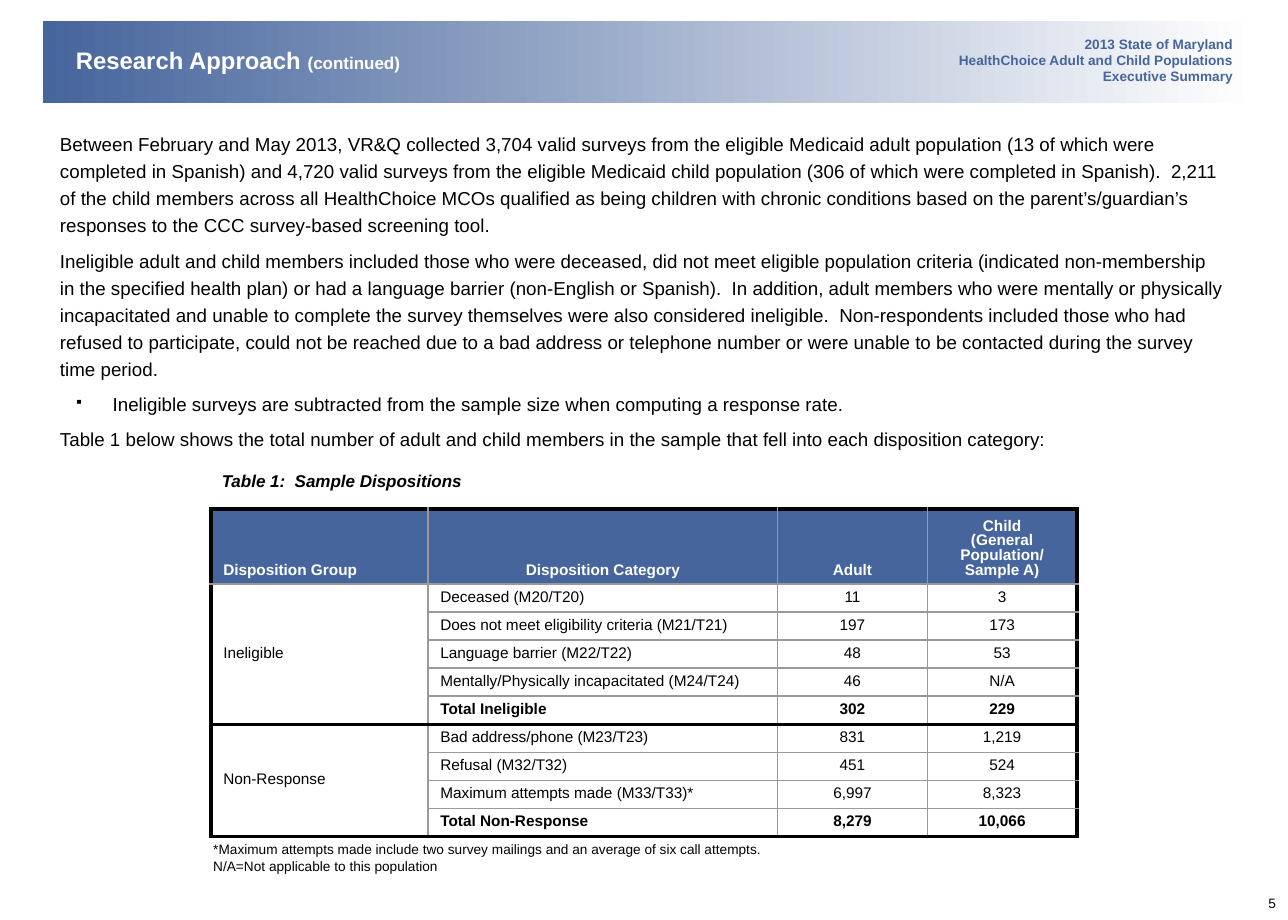
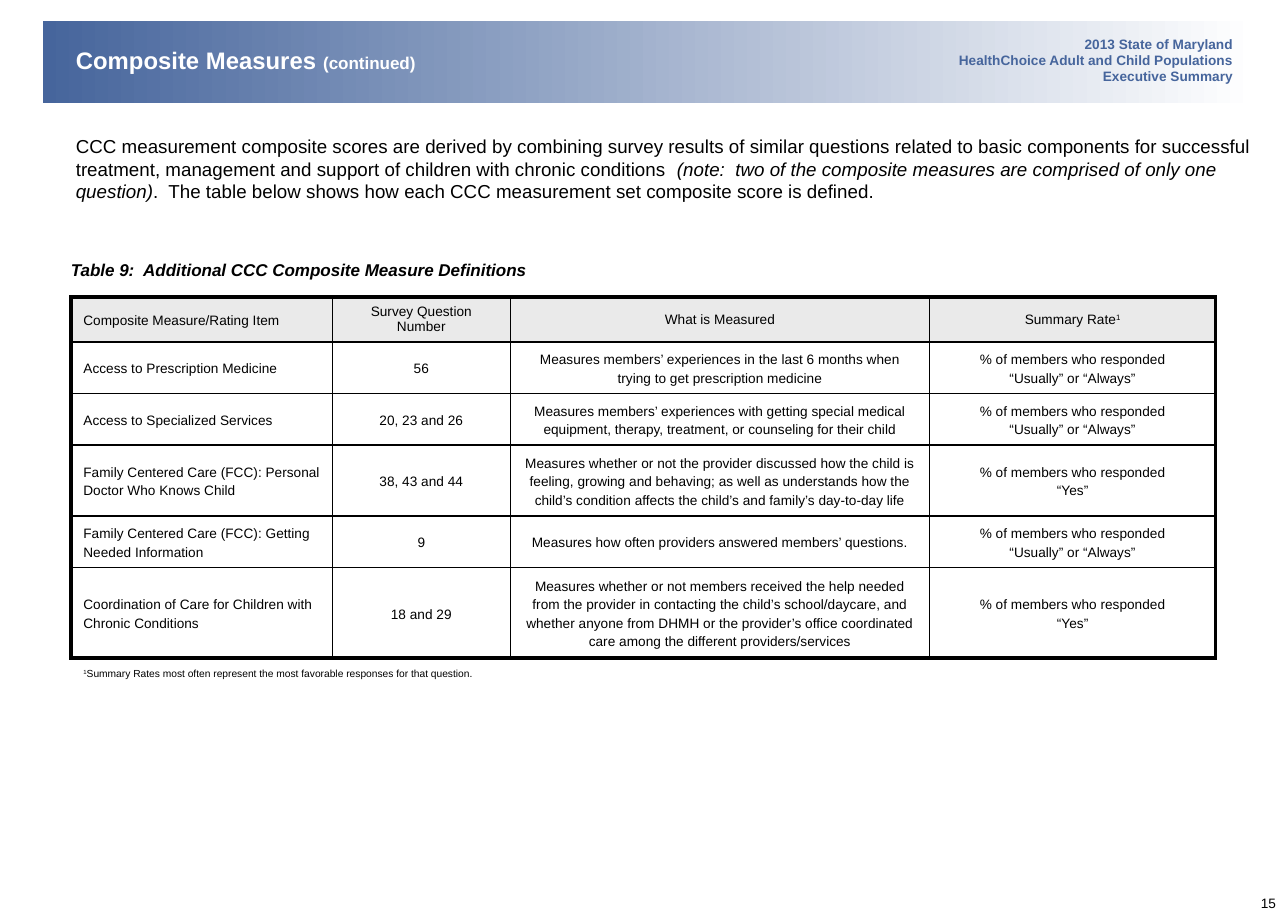
"""Build two survey report slides with a shared heading band and ruled tables."""
from dataclasses import dataclass

from lxml import etree
from pptx import Presentation, util as u
from pptx.dml.color import RGBColor
from pptx.enum import shapes, text
from pptx.oxml.ns import qn

LEFT, CENTER, RIGHT = text.PP_ALIGN.LEFT, text.PP_ALIGN.CENTER, text.PP_ALIGN.RIGHT
TOP, MIDDLE, BOTTOM = text.MSO_ANCHOR.TOP, text.MSO_ANCHOR.MIDDLE, text.MSO_ANCHOR.BOTTOM


@dataclass(frozen=True)
class Theme:
    """Colours, type sizes and line widths of the report."""
    font: str = "Arial"
    blue: str = "46659C"
    white: str = "FFFFFF"
    black: str = "000000"
    rule: str = "999999"
    shade: str = "EAEAEA"
    title: int = 14
    body: int = 11
    caption: int = 10
    cell: int = 9
    small: int = 8
    note: int = 6
    loose: float = 1.2
    tight: float = 0.85
    gap: float = 2.4
    thin: float = 1
    thick: float = 2.25
    no_grid: str = "{2D5ABB26-0587-4C30-8999-92F81FD0307C}"


class Report:
    """Holds the theme and the current slide; lengths are in grid units."""
    COLUMNS, ROWS = 42, 30
    RUNNING_HEAD = ("2013 State of Maryland", "HealthChoice Adult and Child Populations",
                    "Executive Summary")

    def __init__(self, theme):
        """Open an empty deck of the report's size."""
        self.theme = theme
        self.deck = Presentation()
        self.deck.slide_width, self.deck.slide_height = u.Inches(10.5), u.Inches(7.5)
        self.slide = None

    def across(self, columns):
        """Turn grid columns into a length."""
        return u.Emu(round(columns * self.deck.slide_width / self.COLUMNS))

    def down(self, rows):
        """Turn grid rows into a length."""
        return u.Emu(round(rows * self.deck.slide_height / self.ROWS))

    def place(self, left, top, width, height):
        """Turn a grid area into a position and a size."""
        return self.across(left), self.down(top), self.across(width), self.down(height)

    def new_slide(self, heading, number):
        """Start a slide with band, running head, title and page number."""
        theme = self.theme
        self.slide = self.deck.slides.add_slide(self.deck.slide_layouts[6])
        self.band((1.4, 0.68, 39.56, 2.68))
        self.text((39.92, 29, 2.08, 0.92), [str(number)], theme.small, align=RIGHT)
        self.text((30, 0.96, 10.6, 2), self.RUNNING_HEAD, theme.small, theme.blue,
                  align=RIGHT, bold=True)
        title = [(heading + " ", {}), ("(continued)", {"size": u.Pt(theme.caption)})]
        self.text((2.08, 1.2, 27, 1.48), [title], theme.title, theme.white,
                  anchor=MIDDLE, bold=True)

    def band(self, area):
        """Draw the heading band that fades to white."""
        band = self.slide.shapes.add_shape(shapes.MSO_SHAPE.RECTANGLE, *self.place(*area))
        band.shadow.inherit = False
        band.line.fill.background()
        band.fill.gradient()
        band.fill.gradient_angle = 0
        ends = ((0, self.theme.blue), (1, self.theme.white))
        for stop, (position, color) in zip(band.fill.gradient_stops, ends):
            stop.position = position
            stop.color.rgb = RGBColor.from_string(color)

    def typeset(self, paragraph, content, size, color=None, align=LEFT, leading=1.0,
                bold=False, italic=False):
        """Fill a paragraph with a string or with (text, font changes) runs."""
        paragraph.alignment = align
        paragraph.line_spacing = leading
        font = paragraph.font
        font.name, font.size, font.bold, font.italic = self.theme.font, u.Pt(size), bold, italic
        font.color.rgb = RGBColor.from_string(color or self.theme.black)
        if isinstance(content, str):
            paragraph.text = content
            return
        for words, changes in content:
            run = paragraph.add_run()
            run.text = words
            run.font.size = changes.get("size")
            run.font.italic = changes.get("italic")
            if "baseline" in changes:
                run._r.get_or_add_rPr().set("baseline", str(changes["baseline"]))

    def bullet(self, paragraph):
        """Give a paragraph a small square bullet with a hanging indent."""
        paragraph.level = 1
        properties = paragraph._p.get_or_add_pPr()
        properties.set("marL", str(u.Inches(0.43)))
        properties.set("indent", str(u.Inches(-0.31)))
        etree.SubElement(properties, qn("a:buSzPct"), val="65000")
        etree.SubElement(properties, qn("a:buChar"), char="▪")

    def text(self, area, paragraphs, size, color=None, anchor=TOP, gap=0, bullets=(), **style):
        """Add a wrapped text box."""
        frame = self.slide.shapes.add_textbox(*self.place(*area)).text_frame
        frame.word_wrap = True
        frame.vertical_anchor = anchor
        for index, content in enumerate(paragraphs):
            paragraph = frame.add_paragraph() if index else frame.paragraphs[0]
            if index in bullets:
                self.bullet(paragraph)
            self.typeset(paragraph, content, size, color, **style)
            paragraph.space_before = u.Pt(gap if index else 0)
            paragraph.space_after = u.Pt(gap)

    def caption(self, left, top, words):
        """Add a table caption."""
        self.text((left, top, 20, 1.08), [words], self.theme.caption, bold=True, italic=True)

    def edge(self, cell, side, color, width):
        """Rule one side of a cell."""
        line = etree.SubElement(cell._tc.get_or_add_tcPr(), qn("a:ln" + side),
                                w=str(u.Pt(width)))
        fill = etree.SubElement(line, qn("a:solidFill"))
        etree.SubElement(fill, qn("a:srgbClr"), val=color)

    def rule_cell(self, cell, row, column, last_column, heavy, rule):
        """Rule a cell, thick at the frame and at the heavy row lines."""
        theme = self.theme
        below = row + (cell.span_height if cell.is_merge_origin else 1)
        sides = (("L", column == 0, True), ("R", column == last_column, True),
                 ("T", row in heavy, not cell.is_spanned),
                 ("B", below in heavy, not cell.is_spanned))
        for side, is_heavy, is_ruled in sides:
            if row >= max(heavy) and side != "T":
                continue
            if is_heavy:
                self.edge(cell, side, theme.black, theme.thick)
            elif is_ruled:
                self.edge(cell, side, rule, theme.thin)

    def table(self, left, top, widths, heights, rows, heavy, rule, head_fill, style_of,
              merges=(), head_anchor=MIDDLE):
        """Add a table; style_of(row, column) gives the type style of a cell."""
        area = self.place(left, top, sum(widths), sum(heights))
        table = self.slide.shapes.add_table(len(rows), len(widths), *area).table
        table.first_row = table.horz_banding = False
        table._tbl.tblPr.find(qn("a:tableStyleId")).text = self.theme.no_grid
        for column, width in zip(table.columns, widths):
            column.width = self.across(width)
        for row, height in zip(table.rows, heights):
            row.height = self.down(height)
        for start, end in merges:
            table.cell(*start).merge(table.cell(*end))
        for r, contents in enumerate(rows):
            for c, content in enumerate(contents):
                cell = table.cell(r, c)
                cell.vertical_anchor = MIDDLE if r else head_anchor
                self.rule_cell(cell, r, c, len(widths) - 1, heavy, rule)
                if r == 0:
                    cell.fill.solid()
                    cell.fill.fore_color.rgb = RGBColor.from_string(head_fill)
                else:
                    cell.fill.background()
                self.typeset(cell.text_frame.paragraphs[0], content, **style_of(r, c))


def research_approach(report):
    """Build the slide on sample dispositions."""
    theme = report.theme
    report.new_slide("Research Approach", 5)
    report.text((1.56, 4, 38.84, 11), [
        "Between February and May 2013, VR&Q collected 3,704 valid surveys from the eligible "
        "Medicaid adult population (13 of which were completed in Spanish) and 4,720 valid "
        "surveys from the eligible Medicaid child population (306 of which were completed in "
        "Spanish).  2,211 of the child members across all HealthChoice MCOs qualified as being "
        "children with chronic conditions based on the parent’s/guardian’s responses to the CCC "
        "survey-based screening tool.",
        "Ineligible adult and child members included those who were deceased, did not meet "
        "eligible population criteria (indicated non-membership in the specified health plan) or "
        "had a language barrier (non-English or Spanish).  In addition, adult members who were "
        "mentally or physically incapacitated and unable to complete the survey themselves were "
        "also considered ineligible.  Non-respondents included those who had refused to "
        "participate, could not be reached due to a bad address or telephone number or were "
        "unable to be contacted during the survey time period.",
        "Ineligible surveys are subtracted from the sample size when computing a response rate.",
        "Table 1 below shows the total number of adult and child members in the sample that fell "
        "into each disposition category:",
    ], theme.body, gap=theme.gap, bullets=(2,), leading=theme.loose)
    report.caption(6.84, 15.16, "Table 1:  Sample Dispositions")
    dispositions = [
        ("Disposition Group", "Disposition Category", "Adult",
         "Child\n(General Population/ Sample A)"),
        ("Ineligible", "Deceased (M20/T20)", "11", "3"),
        ("", "Does not meet eligibility criteria (M21/T21)", "197", "173"),
        ("", "Language barrier (M22/T22)", "48", "53"),
        ("", "Mentally/Physically incapacitated (M24/T24)", "46", "N/A"),
        ("", "Total Ineligible", "302", "229"),
        ("Non-Response", "Bad address/phone (M23/T23)", "831", "1,219"),
        ("", "Refusal (M32/T32)", "451", "524"),
        ("", "Maximum attempts made (M33/T33)*", "6,997", "8,323"),
        ("", "Total Non-Response", "8,279", "10,066"),
    ]

    def style_of(row, column):
        """Centre the counts and the headings; embolden headings and totals."""
        is_total = dispositions[row][1].startswith("Total")
        return dict(size=theme.cell, leading=theme.tight,
                    color=theme.black if row else theme.white,
                    bold=row == 0 or is_total,
                    align=CENTER if column > 1 or (row == 0 and column) else LEFT)

    report.table(6.88, 16.6, (7.08, 11.4, 4.88, 4.88), [2.44] + [0.91] * 9, dispositions,
                 heavy=(0, 6, 10), rule=theme.rule, head_fill=theme.blue, style_of=style_of,
                 merges=(((1, 0), (5, 0)), ((6, 0), (9, 0))), head_anchor=BOTTOM)
    report.text((6.56, 27.24, 23.44, 1.48), [
        "*Maximum attempts made include two survey mailings and an average of six call attempts."
        "\nN/A=Not applicable to this population"], theme.small)


def composite_measures(report):
    """Build the slide that defines the composite measures."""
    theme = report.theme
    report.new_slide("Composite Measures", 15)
    report.text((2.08, 4.2, 39.2, 4), [[
        ("CCC measurement composite scores are derived by combining survey results of similar "
         "questions related to basic components for successful treatment, management and support "
         "of children with chronic conditions  ", {}),
        ("(note:  two of the composite measures are comprised of only one question)",
         {"italic": True}),
        (".  The table below shows how each CCC measurement set composite score is defined.", {}),
    ]], theme.body)
    report.caption(1.92, 8.28, "Table 9:  Additional CCC Composite Measure Definitions")
    often, yes = ("% of members who responded\n" + answer
                  for answer in ("“Usually” or “Always”", "“Yes”"))
    footnote_mark = ("1", {"baseline": 30000})
    measures = [
        ("Composite Measure/Rating Item", "Survey Question Number", "What is Measured",
         [("Summary Rate", {}), footnote_mark]),
        ("Access to Prescription Medicine", "56",
         "Measures members’ experiences in the last 6 months when trying to get prescription "
         "medicine", often),
        ("Access to Specialized Services", "20, 23 and 26",
         "Measures members’ experiences with getting special medical equipment, therapy, "
         "treatment, or counseling for their child", often),
        ("Family Centered Care (FCC): Personal Doctor Who Knows Child", "38, 43 and 44",
         "Measures whether or not the provider discussed how the child is feeling, growing and "
         "behaving; as well as understands how the child’s condition affects the child’s and "
         "family’s day-to-day life", yes),
        ("Family Centered Care (FCC): Getting Needed Information", "9",
         "Measures how often providers answered members’ questions.", often),
        ("Coordination of Care for Children with Chronic Conditions", "18 and 29",
         "Measures whether or not members received the help needed from the provider in "
         "contacting the child’s school/daycare, and whether anyone from DHMH or the provider’s "
         "office coordinated care among the different providers/services", yes),
        ([footnote_mark, ("Summary Rates most often represent the most favorable responses for "
                          "that question.", {})], "", "", ""),
    ]
    footnote_row = len(measures) - 1

    def style_of(row, column):
        """Centre all but the first column; set the footnote small."""
        return dict(size=theme.note if row == footnote_row else theme.small,
                    leading=theme.loose if row or not column else 1.0,
                    align=CENTER if column else LEFT)

    report.table(2.32, 9.68, (8.52, 5.8, 13.68, 9.32),
                 (1.04, 1.68, 1.68, 2.32, 1.68, 2.96, 0.96), measures,
                 heavy=(0, footnote_row), rule=theme.black, head_fill=theme.shade,
                 style_of=style_of, merges=(((footnote_row, 0), (footnote_row, 2)),))


def main():
    """Build and save the deck."""
    report = Report(Theme())
    research_approach(report)
    composite_measures(report)
    report.deck.save("out.pptx")


if __name__ == "__main__":
    main()
